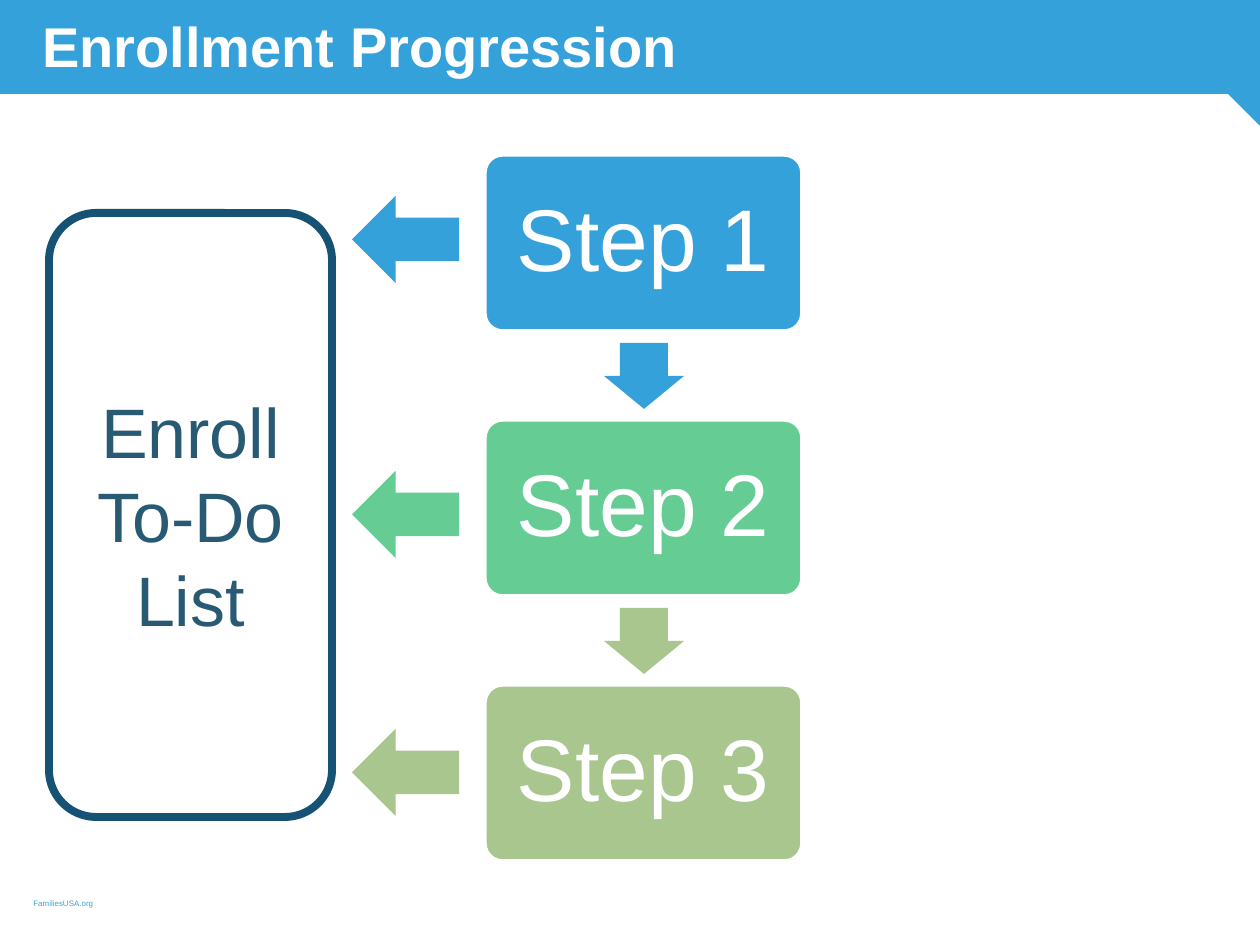
from dataclasses import dataclass

from pptx import Presentation
from pptx.dml.color import RGBColor
from pptx.enum.shapes import MSO_SHAPE
from pptx.enum.text import MSO_ANCHOR, PP_ALIGN
from pptx.util import Pt

EMU_PER_PX = 914400 / 126


@dataclass(frozen=True)
class Theme:
    font: str = "Arial"
    blue: str = "35A1DA"
    green: str = "65CD93"
    olive: str = "A8C68E"
    navy: str = "155273"
    slate: str = "295A74"
    white: str = "FFFFFF"
    title_size: float = 32
    step_size: float = 50
    list_size: float = 40
    footer_size: float = 4.5


theme = Theme()
presentation = Presentation()
presentation.slide_width = round(1260 * EMU_PER_PX)
presentation.slide_height = round(945 * EMU_PER_PX)
slide = presentation.slides.add_slide(presentation.slide_layouts[6])


def add_shape(kind, box, fill=None, line=None, line_width=0, adjustments=()):
    """Add a preset shape, with box as left, top, width, height in px."""
    shape = slide.shapes.add_shape(kind, *(round(px * EMU_PER_PX) for px in box))
    shape.shadow.inherit = False
    for target, color in ((shape.fill, fill), (shape.line.fill, line)):
        if color:
            target.solid()
            target.fore_color.rgb = RGBColor.from_string(color)
        else:
            target.background()
    if line:
        shape.line.width = Pt(line_width)
    for index, value in enumerate(adjustments):
        shape.adjustments[index] = value
    return shape


def add_text(text, *, size, color, shape=None, box=None, bold=False,
             align=PP_ALIGN.LEFT, anchor=MSO_ANCHOR.TOP, spacing=1.0, inset=None):
    """Write text into the given shape, or into a new text box at box (px)."""
    if shape is None:
        shape = slide.shapes.add_textbox(*(round(px * EMU_PER_PX) for px in box))
    frame = shape.text_frame
    frame.word_wrap = True
    frame.vertical_anchor = anchor
    if inset is not None:
        margin = round(inset * EMU_PER_PX)
        frame.margin_left = frame.margin_right = margin
        frame.margin_top = frame.margin_bottom = margin
    paragraph = frame.paragraphs[0]
    paragraph.alignment = align
    paragraph.line_spacing = spacing
    run = paragraph.add_run()
    run.text = text
    run.font.name = theme.font
    run.font.size = Pt(size)
    run.font.bold = bold
    run.font.color.rgb = RGBColor.from_string(color)


# Header band, folded corner and footer
add_shape(MSO_SHAPE.RECTANGLE, (0, 0, 1260, 94), theme.blue)
corner = add_shape(MSO_SHAPE.RIGHT_TRIANGLE, (1228, 94, 32, 32), theme.blue)
corner.rotation = 180
add_text("Enrollment Progression", box=(30, 5, 1094, 81),
         size=theme.title_size, color=theme.white, bold=True)
add_text("FamiliesUSA.org", box=(21, 892, 431, 23),
         size=theme.footer_size, color=theme.blue)

# Steps, top to bottom
step_colors = (theme.blue, theme.green, theme.olive)
step_top, step_pitch = 155, 265
for index, color in enumerate(step_colors):
    step = add_shape(MSO_SHAPE.ROUNDED_RECTANGLE,
                     (485, step_top + index * step_pitch, 317, 176),
                     color, theme.white, 2, (0.1,))
    add_text(f"Step {index + 1}", shape=step, size=theme.step_size,
             color=theme.white, align=PP_ALIGN.CENTER,
             anchor=MSO_ANCHOR.MIDDLE, spacing=0.9, inset=26)

# Arrows from one step to the next
for index, color in enumerate((theme.blue, theme.olive)):
    add_shape(MSO_SHAPE.DOWN_ARROW, (604, 343 + index * step_pitch, 80, 66),
              color, adjustments=(0.6, 0.5))

# To-do list and the arrows that lead to it
todo_list = add_shape(MSO_SHAPE.ROUNDED_RECTANGLE, (49, 213, 283, 604),
                      line=theme.navy, line_width=4.5)
add_text("Enroll To-Do List", shape=todo_list, size=theme.list_size,
         color=theme.slate, align=PP_ALIGN.CENTER, anchor=MSO_ANCHOR.MIDDLE)
for top, color in zip((196, 471, 729), step_colors):
    add_shape(MSO_SHAPE.LEFT_ARROW, (352, top, 107, 87), color)

presentation.save("out.pptx")
